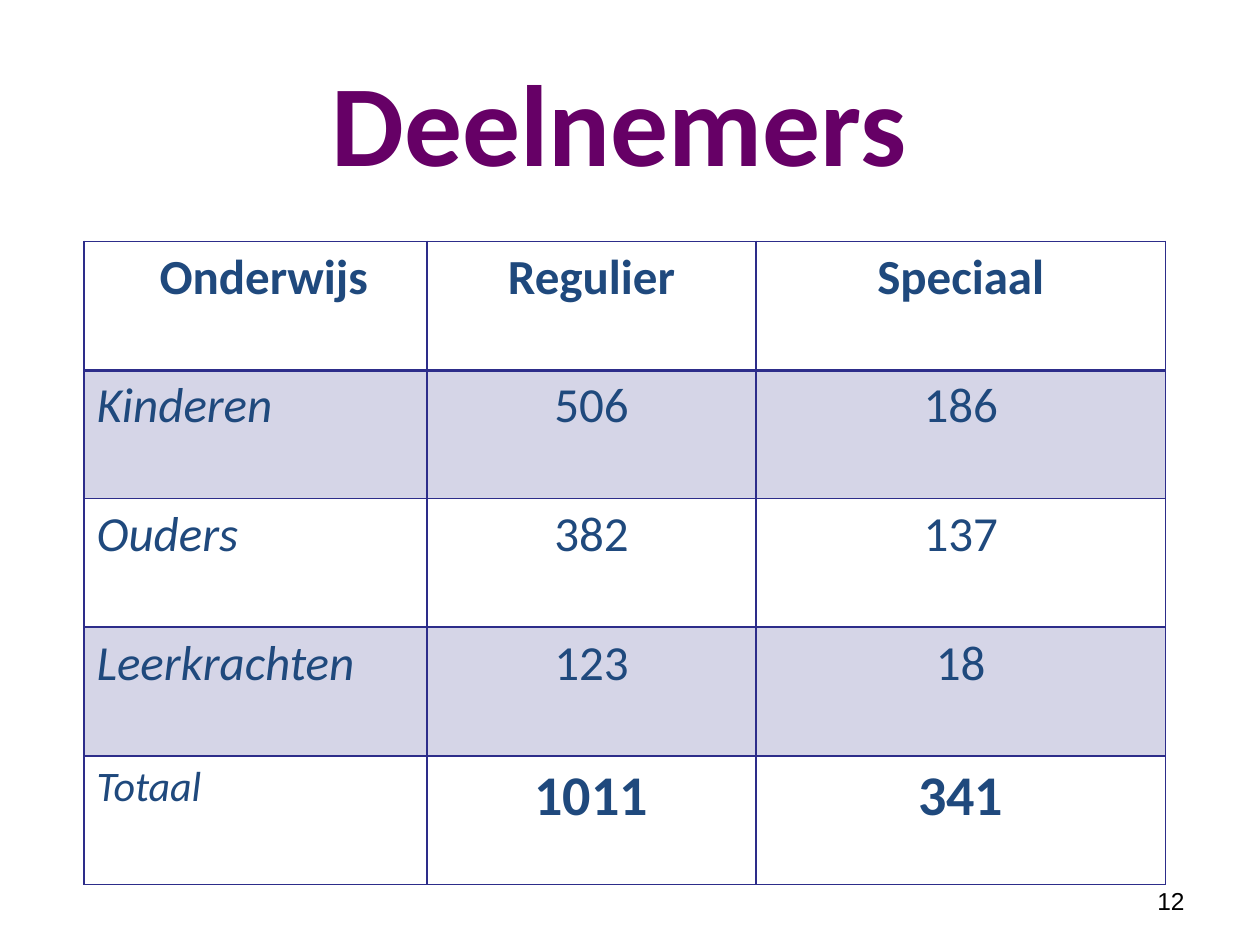
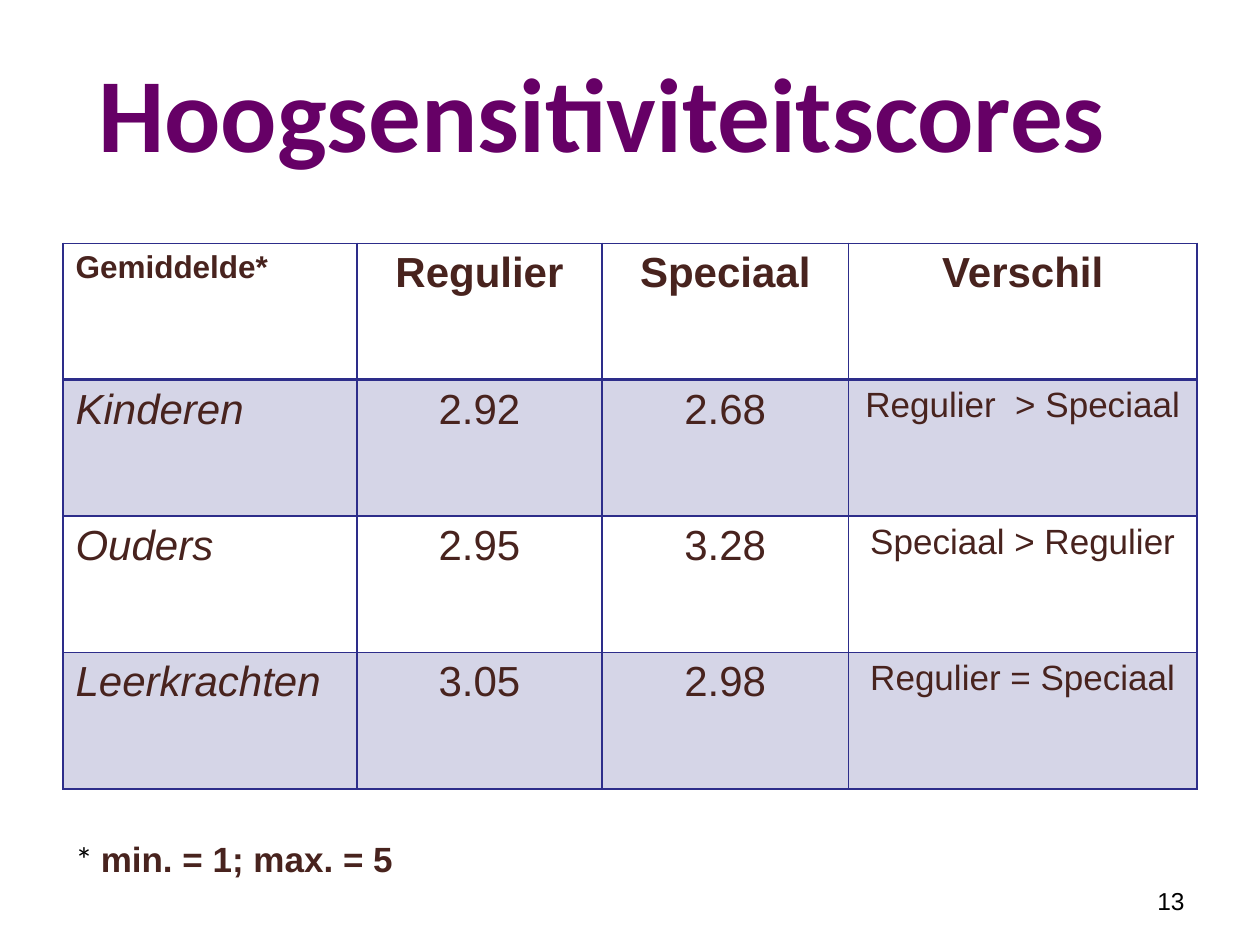
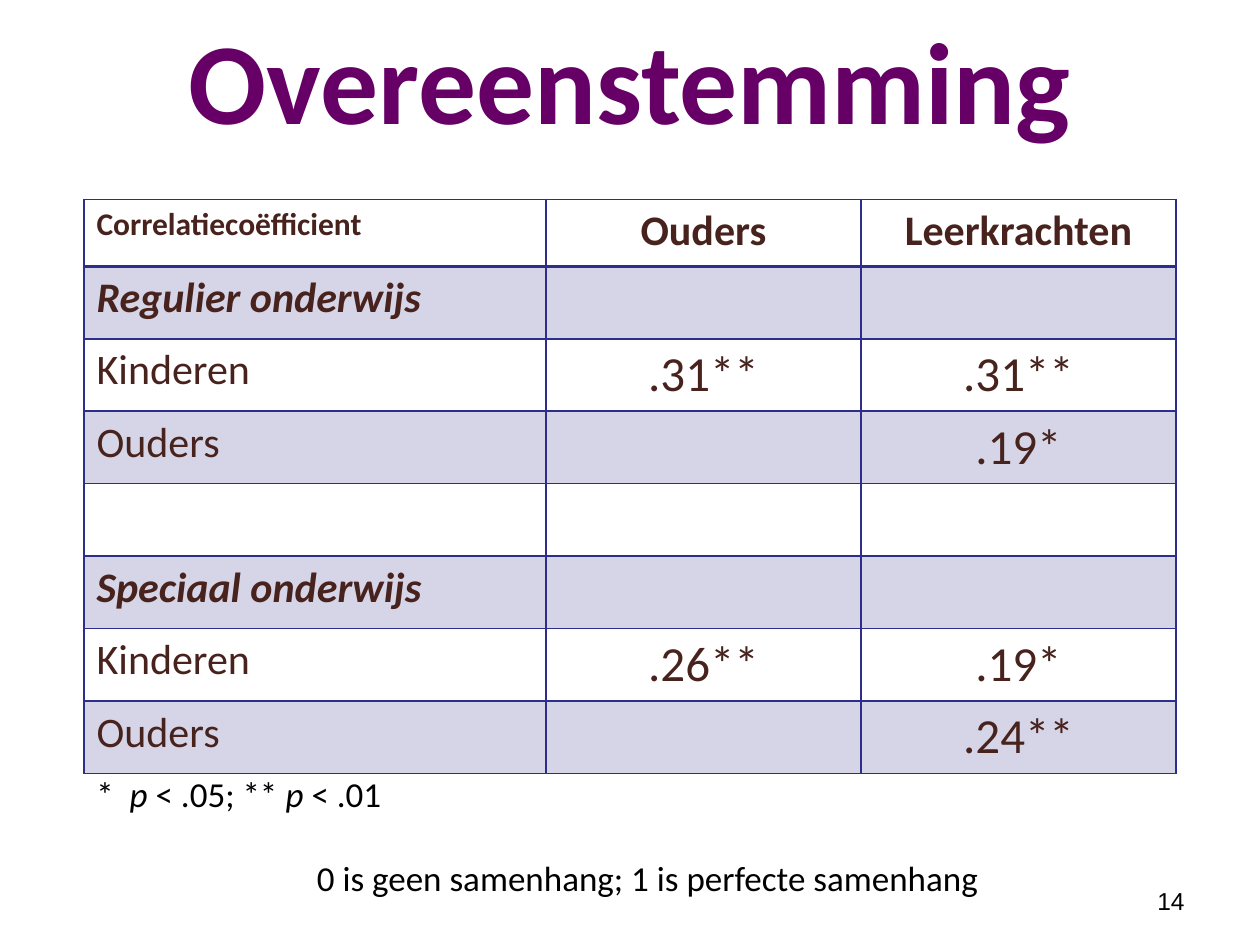
import pptx
import pptx.dml.color
import pptx.enum.text
import pptx.oxml
import pptx.oxml.ns
import pptx.util
from lxml import etree

Pt = pptx.util.Pt
RGBColor = pptx.dml.color.RGBColor
ALIGN = pptx.enum.text.PP_ALIGN
ANCHOR = pptx.enum.text.MSO_ANCHOR
qn = pptx.oxml.ns.qn

PURPLE = RGBColor(0x66, 0x00, 0x66)
NAVY = RGBColor(0x2D, 0x2D, 0x8A)
BLUE = RGBColor(0x1F, 0x49, 0x7D)
BROWN = RGBColor(0x48, 0x23, 0x1E)
BLACK = RGBColor(0, 0, 0)

FIRST_NUMBER = 12
HEADER_INDENT = 36
BAND_ALPHA = 20000

# Table rows: cell texts, cell sizes, label style, value style (b bold, i italic)
# Notes: box, wrap, runs of (text, size, font, colour, style)
SLIDES = [
    {
        "title": ("Deelnemers", 66, (48, 24, 612, 90)),
        "origin": (48, 138),
        "cols": [196, 188, 234],
        "heights": [73.5] * 5,
        "font": "Calibri",
        "color": BLUE,
        "header_indent": HEADER_INDENT,
        "rows": [
            (["Onderwijs", "Regulier", "Speciaal"], [28, 28, 28], "b", "b"),
            (["Kinderen", "506", "186"], [28, 28, 28], "i", ""),
            (["Ouders", "382", "137"], [28, 28, 28], "i", ""),
            (["Leerkrachten", "123", "18"], [28, 28, 28], "i", ""),
            (["Totaal", "1011", "341"], [24, 32, 32], "i", "b"),
        ],
        "notes": [],
    },
    {
        "title": ("Hoogsensitiviteitscores", 60, (22, 18, 644, 90)),
        "origin": (36, 139),
        "cols": [168, 140, 141, 199],
        "heights": [78] * 4,
        "font": "Arial",
        "color": BROWN,
        "header_indent": 0,
        "rows": [
            (["Gemiddelde*", "Regulier", "Speciaal", "Verschil"], [18, 24, 24, 24], "b", "b"),
            (["Kinderen", "2.92", "2.68", "Regulier  > Speciaal"], [24, 24, 24, 20], "i", ""),
            (["Ouders", "2.95", "3.28", "Speciaal > Regulier"], [24, 24, 24, 20], "i", ""),
            (["Leerkrachten", "3.05", "2.98", "Regulier = Speciaal"], [24, 24, 24, 20], "i", ""),
        ],
        "notes": [
            ((36, 475, 299, 53), True, [
                ("* ", 20, "Calibri", BLACK, ""),
                ("min. = 1; max. = 5", 20, "Arial", BROWN, "b"),
            ]),
        ],
    },
    {
        "title": ("Overeenstemming", 66, (54, 0, 612, 90)),
        "origin": (48, 114),
        "cols": [264, 180, 180],
        "heights": [38.2] + [41.4] * 7,
        "font": "Calibri",
        "color": BROWN,
        "header_indent": 0,
        "rows": [
            (["Correlatiecoëfficient", "Ouders", "Leerkrachten"], [18, 24, 24], "b", "b"),
            (["Regulier onderwijs", "", ""], [24, 28, 28], "bi", ""),
            (["Kinderen", ".31**", ".31**"], [24, 28, 28], "", ""),
            (["Ouders", "", ".19*"], [24, 28, 28], "", ""),
            (["", "", ""], [24, 28, 28], "", ""),
            (["Speciaal onderwijs", "", ""], [24, 28, 28], "bi", ""),
            (["Kinderen", ".26**", ".19*"], [24, 28, 28], "", ""),
            (["Ouders", "", ".24**"], [24, 28, 28], "", ""),
        ],
        "notes": [
            ((174, 486, 444, 32), True, [
                ("0 is geen samenhang; 1 is perfecte samenhang", 20, "Calibri", BLACK, ""),
            ]),
            ((48, 438, 179, 32), False, [
                ("*  ", 20, "Calibri", BLACK, ""),
                ("p", 20, "Calibri", BLACK, "i"),
                (" < .05; ** ", 20, "Calibri", BLACK, ""),
                ("p", 20, "Calibri", BLACK, "i"),
                (" < .01", 20, "Calibri", BLACK, ""),
            ]),
        ],
    },
]


def write(tf, runs, align=ALIGN.LEFT):
    p = tf.paragraphs[0]
    p.alignment = align
    for text, size, font, color, style in runs:
        r = p.add_run()
        r.text = text
        r.font.size = Pt(size)
        r.font.name = font
        r.font.color.rgb = color
        r.font.bold = "b" in style
        r.font.italic = "i" in style


def add_text(slide, box, runs, align=ALIGN.LEFT, anchor=ANCHOR.TOP, wrap=True):
    tf = slide.shapes.add_textbox(*map(Pt, box)).text_frame
    tf.word_wrap = wrap
    tf.vertical_anchor = anchor
    write(tf, runs, align)


prs = pptx.Presentation()
prs.slide_width = Pt(720)
prs.slide_height = Pt(540)

for number, data in enumerate(SLIDES, FIRST_NUMBER):
    slide = prs.slides.add_slide(prs.slide_layouts[6])
    title, title_size, title_box = data["title"]
    add_text(slide, title_box, [(title, title_size, "Calibri", PURPLE, "b")],
             ALIGN.CENTER, ANCHOR.MIDDLE)

    cols, heights = data["cols"], data["heights"]
    box = (*data["origin"], sum(cols), sum(heights))
    table = slide.shapes.add_table(len(heights), len(cols), *map(Pt, box)).table
    table.first_row = False
    table.horz_banding = False
    for col, width in zip(table.columns, cols):
        col.width = Pt(width)
    for row, height in zip(table.rows, heights):
        row.height = Pt(height)

    for i, (texts, sizes, label_style, value_style) in enumerate(data["rows"]):
        for j, (text, size) in enumerate(zip(texts, sizes)):
            cell = table.cell(i, j)
            tcPr = cell._tc.get_or_add_tcPr()
            for side in "LRTB":
                heavy = (i, side) in ((0, "B"), (1, "T"))
                ln = etree.SubElement(tcPr, qn(f"a:ln{side}"), w=str(Pt(2 if heavy else 1)))
                fill = etree.SubElement(ln, qn("a:solidFill"))
                etree.SubElement(fill, qn("a:srgbClr"), val=str(NAVY))
            if i % 2:
                cell.fill.solid()
                cell.fill.fore_color.rgb = NAVY
                clr = tcPr.find(qn("a:solidFill"))[0]
                etree.SubElement(clr, qn("a:alpha"), val=str(BAND_ALPHA))
            else:
                cell.fill.background()
            if text:
                style = value_style if j else label_style
                write(cell.text_frame, [(text, size, data["font"], data["color"], style)],
                      ALIGN.CENTER if j else ALIGN.LEFT)
    table.cell(0, 0).margin_left = Pt(7.2 + data["header_indent"])

    add_text(slide, (516, 500, 168, 29), [(str(number), 14, "Arial", BLACK, "")],
             ALIGN.RIGHT, ANCHOR.MIDDLE)
    for note_box, wrap, runs in data["notes"]:
        add_text(slide, note_box, runs, wrap=wrap)

prs.save("out.pptx")
